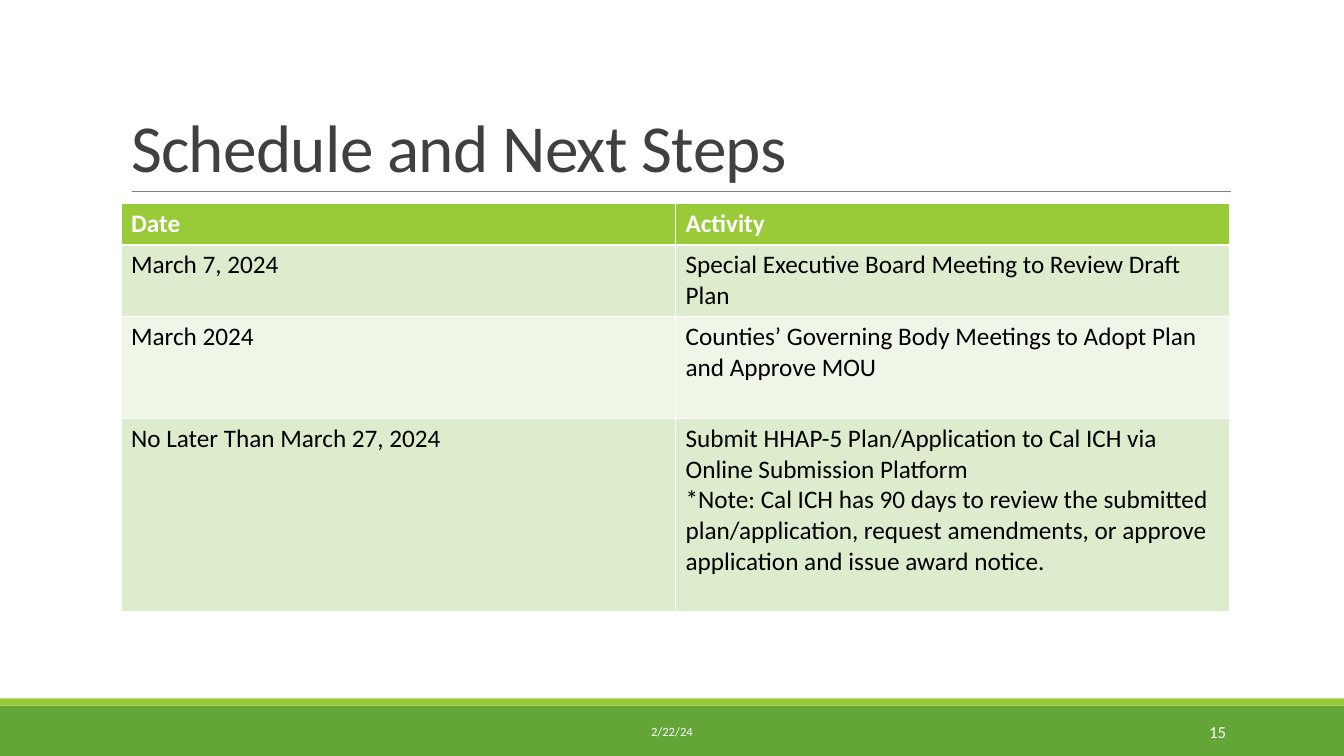
import pptx
import pptx.dml.color
import pptx.enum.shapes
import pptx.enum.text
import pptx.oxml
import pptx.util
from pptx.oxml.ns import nsdecls

TITLE = "Schedule and Next Steps"
SCHEDULE = [
    ("Date", ["Activity"]),
    ("March 7, 2024", ["Special Executive Board Meeting to Review Draft Plan"]),
    ("March 2024", ["Counties’ Governing Body Meetings to Adopt Plan and Approve MOU"]),
    ("No Later Than March 27, 2024", [
        "Submit HHAP-5 Plan/Application to Cal ICH via Online Submission Platform",
        "*Note: Cal ICH has 90 days to review the submitted plan/application, "
        "request amendments, or approve application and issue award notice.",
    ]),
]
ROW_HEIGHTS = [0.41, 0.71, 1.01, 1.92]
SLIDE_DATE, SLIDE_NUMBER = "2/22/24", "15"
COLORS = {"green": "63A537", "lime": "99CB38", "rule": "808080", "title": "404040",
          "white": "FFFFFF", "black": "000000", "odd": "DEECCE", "even": "EFF6E8"}

WIDTH, HEIGHT = 13.33, 7.5
LEFT, CONTENT_WIDTH = 1.2, 11
FOOTER_TOP, STRIPE = 7, 0.07
ALIGN = pptx.enum.text.PP_ALIGN
ANCHOR = pptx.enum.text.MSO_ANCHOR
inches = pptx.util.Inches


def rgb(name):
    return pptx.dml.color.RGBColor.from_string(COLORS[name])


def write(frame, *lines, size=18, color="black", bold=False, align=ALIGN.LEFT,
          anchor=ANCHOR.TOP, line_spacing=None, tracking=None):
    """Fill a text frame, one paragraph per line; tracking is in points."""
    frame.word_wrap = True
    frame.vertical_anchor = anchor
    for index, line in enumerate(lines):
        paragraph = frame.add_paragraph() if index else frame.paragraphs[0]
        paragraph.alignment = align
        paragraph.line_spacing = line_spacing
        run = paragraph.add_run()
        run.text = line
        run.font.name = "Calibri"
        run.font.size = pptx.util.Pt(size)
        run.font.bold = bold
        run.font.color.rgb = rgb(color)
        if tracking is not None:
            run.font._element.set("spc", str(int(tracking * 100)))


def add_band(slide, top, height, color):
    band = slide.shapes.add_shape(pptx.enum.shapes.MSO_SHAPE.RECTANGLE, 0,
                                  inches(top), inches(WIDTH), inches(height))
    band.shadow.inherit = False
    band.fill.solid()
    band.fill.fore_color.rgb = rgb(color)
    band.line.fill.background()


def add_title(slide):
    rule = slide.shapes.add_connector(pptx.enum.shapes.MSO_CONNECTOR.STRAIGHT,
                                      inches(1.31), inches(1.9), inches(12.21), inches(1.9))
    rule.line.color.rgb = rgb("rule")
    rule.line.width = pptx.util.Pt(0.5)
    rule._element.spPr.append(pptx.oxml.parse_xml(f"<a:effectLst {nsdecls('a')}/>"))

    title = slide.shapes.title
    title.left, title.top = inches(LEFT), inches(0.31)
    title.width, title.height = inches(CONTENT_WIDTH), inches(1.59)
    title.text_frame.auto_size = pptx.enum.text.MSO_AUTO_SIZE.NONE
    write(title.text_frame, TITLE, size=48, color="title", anchor=ANCHOR.BOTTOM,
          line_spacing=0.85, tracking=-0.5)


def add_schedule(slide):
    table = slide.shapes.add_table(len(SCHEDULE), 2, inches(LEFT), inches(2.02),
                                   inches(CONTENT_WIDTH), inches(sum(ROW_HEIGHTS))).table
    for index, (date, activity) in enumerate(SCHEDULE):
        header = index == 0
        table.rows[index].height = inches(ROW_HEIGHTS[index])
        fill = "lime" if header else "odd" if index % 2 else "even"
        for column, lines in enumerate(([date], activity)):
            cell = table.cell(index, column)
            cell.fill.solid()
            cell.fill.fore_color.rgb = rgb(fill)
            write(cell.text_frame, *lines, bold=header,
                  color="white" if header else "black")


def add_footer_text(slide, text, left, width, size, align):
    box = slide.shapes.add_textbox(inches(left), inches(7.06), inches(width), inches(0.4))
    write(box.text_frame, text, size=size, color="white", align=align, anchor=ANCHOR.MIDDLE)


def main():
    deck = pptx.Presentation()
    deck.slide_width, deck.slide_height = inches(WIDTH), inches(HEIGHT)
    slide = deck.slides.add_slide(deck.slide_layouts[5])
    add_band(slide, FOOTER_TOP, HEIGHT - FOOTER_TOP, "green")
    add_band(slide, FOOTER_TOP - STRIPE, STRIPE, "lime")
    add_title(slide)
    add_footer_text(slide, SLIDE_NUMBER, 10.83, 1.43, 12, ALIGN.RIGHT)
    add_footer_text(slide, SLIDE_DATE, 4.03, 5.27, 9, ALIGN.CENTER)
    add_schedule(slide)
    deck.save("out.pptx")


if __name__ == "__main__":
    main()
